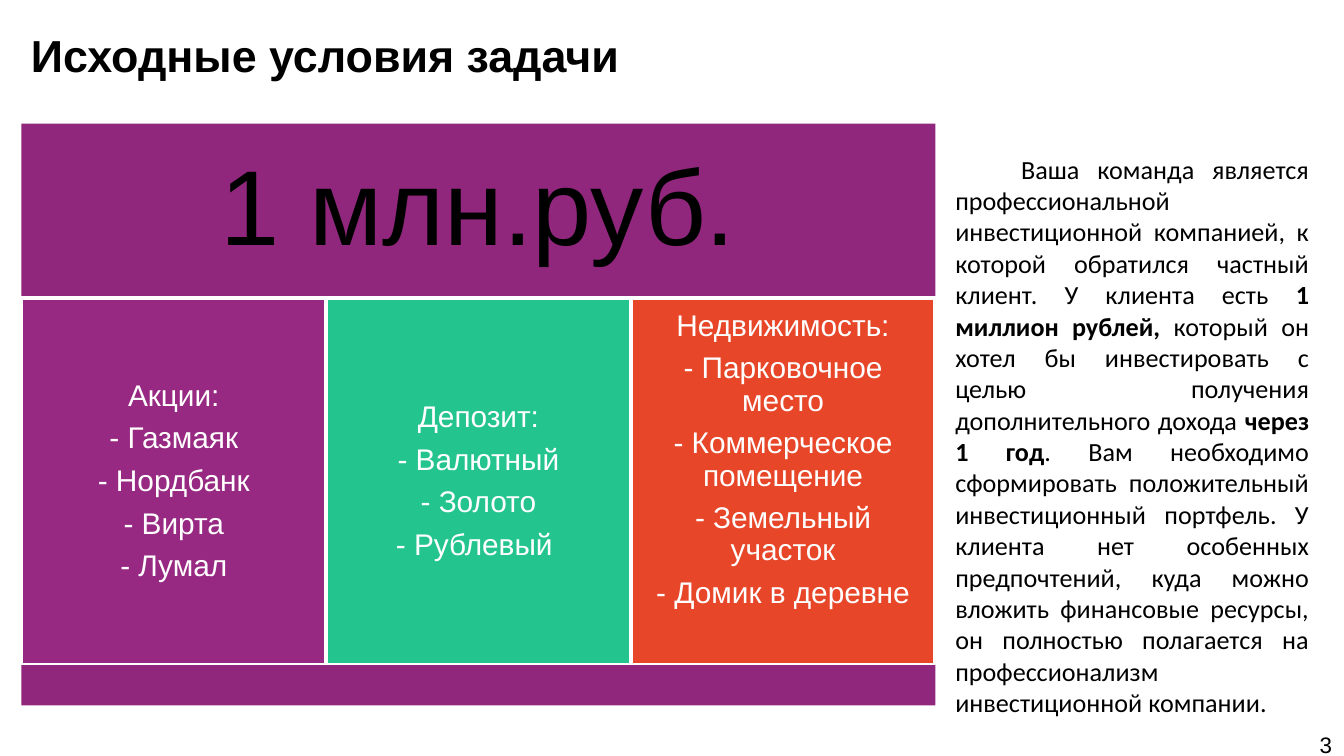
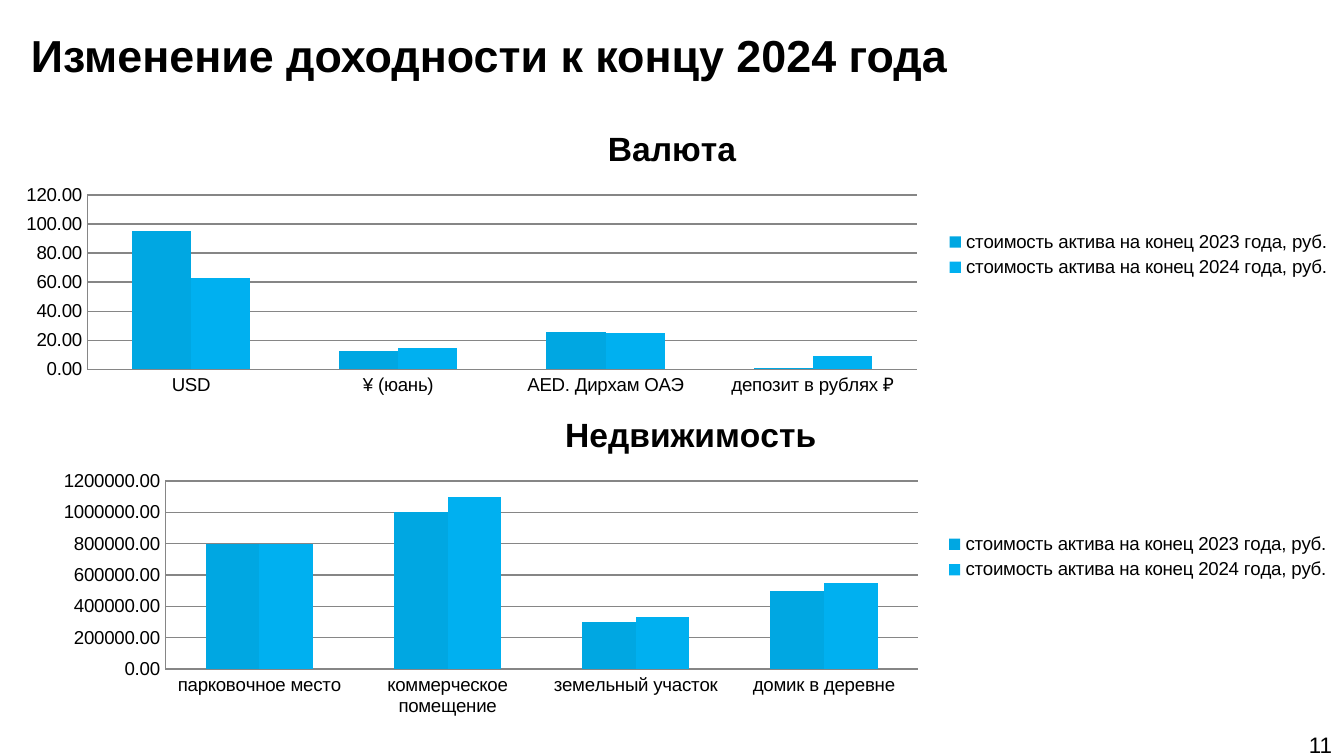
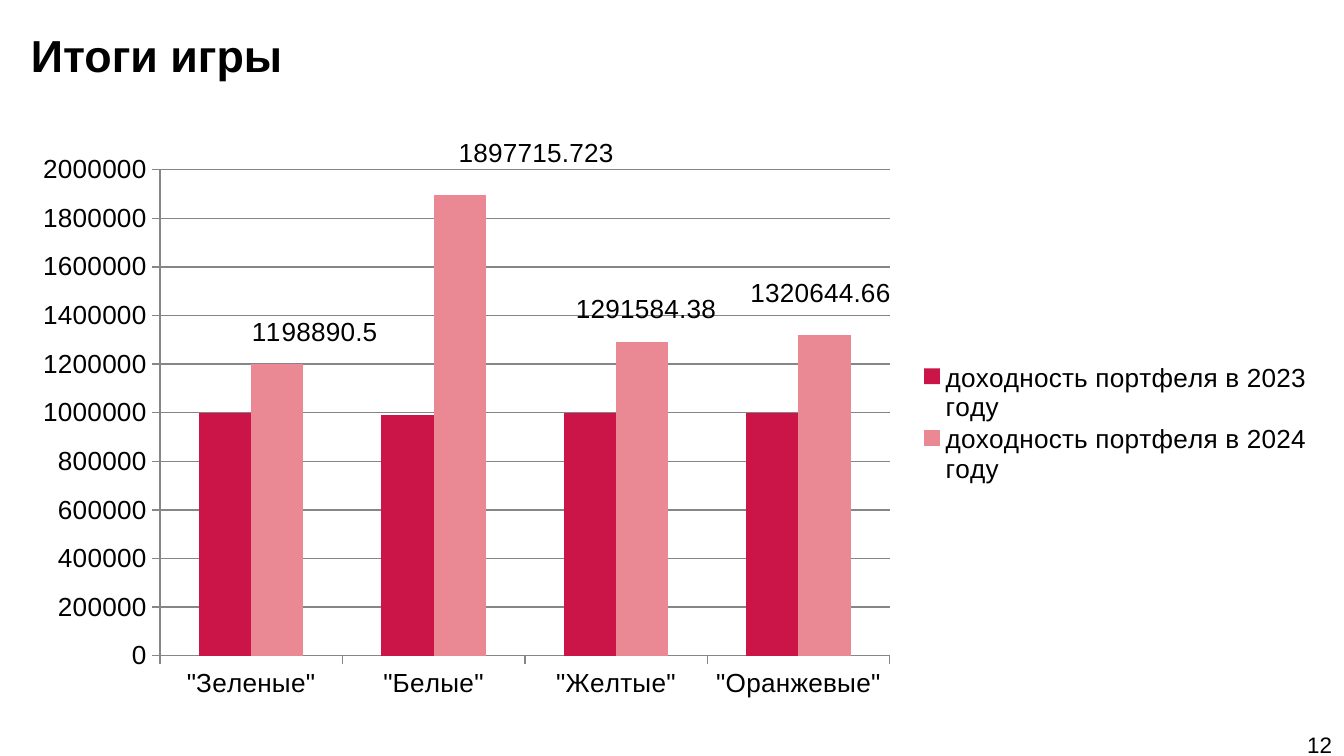
from dataclasses import dataclass

from lxml import etree
from pptx import Presentation
from pptx.chart.data import CategoryChartData
from pptx.dml.color import RGBColor
from pptx.enum.chart import XL_CHART_TYPE, XL_LABEL_POSITION, XL_LEGEND_POSITION, XL_TICK_MARK
from pptx.enum.shapes import MSO_SHAPE
from pptx.enum.text import MSO_ANCHOR, MSO_AUTO_SIZE, PP_ALIGN
from pptx.oxml.ns import qn
from pptx.util import Inches, Pt

COLUMNS = XL_CHART_TYPE.COLUMN_CLUSTERED
OUTSIDE_END = XL_LABEL_POSITION.OUTSIDE_END
LEGEND_RIGHT = XL_LEGEND_POSITION.RIGHT
TICK_NONE, TICK_OUT = XL_TICK_MARK.NONE, XL_TICK_MARK.OUTSIDE
RECTANGLE = MSO_SHAPE.RECTANGLE
MIDDLE = MSO_ANCHOR.MIDDLE
GROW = MSO_AUTO_SIZE.SHAPE_TO_FIT_TEXT
LEFT, CENTER, RIGHT, JUSTIFY = PP_ALIGN.LEFT, PP_ALIGN.CENTER, PP_ALIGN.RIGHT, PP_ALIGN.JUSTIFY


@dataclass(frozen=True)
class Theme:
    """Colours, fonts and type sizes of the deck."""

    black: str = "000000"
    white: str = "FFFFFF"
    band: str = "90277D"
    purple: str = "972983"
    green: str = "24C48F"
    orange: str = "E74629"
    grid: str = "868686"
    blues: tuple = ("00A7E2", "00B0F0")
    reds: tuple = ("CB1549", "EA8894")
    font: str = "Arial"
    body_font: str = "Calibri"
    title: int = 24
    headline: int = 57
    column: int = 16
    body: int = 14
    number: int = 12
    chart_title: int = 18
    chart_small: int = 10
    chart_large: int = 14


THEME = Theme()


def rgb(value):
    """Turn a hex string into a colour."""
    return RGBColor.from_string(value)


def style_font(font, size, color=THEME.black, bold=False, name=THEME.font):
    """Set the look of a font."""
    font.name, font.size, font.bold = name, Pt(size), bold
    font.color.rgb = rgb(color)


def add_span(para, text, size, **look):
    """Add one formatted run."""
    span = para.add_run()
    span.text = text
    style_font(span.font, size, **look)


def place(item, left, top, width, height):
    """Move and size an element, in inches."""
    item.left, item.top = Inches(left), Inches(top)
    item.width, item.height = Inches(width), Inches(height)


def add_page(deck, title, number):
    """Add a page with its title and number."""
    page = deck.slides.add_slide(deck.slide_layouts[5])
    heading = page.shapes.title
    place(heading, 0.13, 0.17, 8.98, 0.47)
    heading.text_frame.vertical_anchor = MIDDLE
    para = heading.text_frame.paragraphs[0]
    para.alignment = LEFT
    add_span(para, title, THEME.title, bold=True)

    box = page.shapes.add_textbox(Inches(9.44), Inches(5.39), Inches(0.57), Inches(0.3))
    box.text_frame.word_wrap = True
    box.text_frame.vertical_anchor = MIDDLE
    para = box.text_frame.paragraphs[0]
    para.alignment = RIGHT
    add_span(para, str(number), THEME.number)
    return page


def add_panel(page, area, fill, outlined=False):
    """Add a filled rectangle."""
    panel = page.shapes.add_shape(RECTANGLE, *map(Inches, area))
    panel.shadow.inherit = False
    panel.fill.solid()
    panel.fill.fore_color.rgb = rgb(fill)
    if outlined:
        panel.line.color.rgb = rgb(THEME.white)
        panel.line.width = Pt(2)
    else:
        panel.line.fill.background()
    panel.text_frame.word_wrap = True
    panel.text_frame.vertical_anchor = MIDDLE
    return panel


def write_lines(panel, lines, size, color, margin, bottom):
    """Write centred lines in a panel."""
    frame = panel.text_frame
    frame.margin_left = frame.margin_right = frame.margin_top = Inches(margin)
    frame.margin_bottom = Inches(bottom)
    for index, line in enumerate(lines):
        para = frame.add_paragraph() if index else frame.paragraphs[0]
        para.alignment = CENTER
        para.line_spacing = 0.9
        para.space_after = Pt(5.6)
        add_span(para, line, size, color=color)


def add_brief(page, area, spans):
    """Add the justified task text from (text, bold) spans."""
    panel = add_panel(page, area, THEME.white)
    panel.text_frame.auto_size = GROW
    para = panel.text_frame.paragraphs[0]
    para.alignment = JUSTIFY
    properties = para._p.get_or_add_pPr()
    properties.set("marL", "0")
    properties.set("indent", str(Inches(0.49)))
    for text, bold in spans:
        add_span(para, text, THEME.body, bold=bold, name=THEME.body_font)


def set_layout(parent, after, values, modes=()):
    """Give a chart part a manual layout, placed after a named child."""
    for old in parent.findall(qn("c:layout")):
        parent.remove(old)
    layout = etree.Element(qn("c:layout"))
    manual = etree.SubElement(layout, qn("c:manualLayout"))
    for tag, value in (*modes, *zip("xywh", values)):
        etree.SubElement(manual, qn(f"c:{tag}")).set("val", str(value))
    if after is None:
        parent.insert(0, layout)
    else:
        parent.find(qn(after)).addnext(layout)


def shares(lengths, frame):
    """Turn inches inside a chart into shares of its width and height."""
    return [length / frame.width if index % 2 == 0 else length / frame.height
            for index, length in enumerate(map(Inches, lengths))]


def style_axis(axis, size, tick):
    """Set text, line and tick marks of an axis."""
    style_font(axis.tick_labels.font, size)
    axis.format.line.color.rgb = rgb(THEME.grid)
    axis.major_tick_mark, axis.minor_tick_mark = tick, TICK_NONE


def add_columns(page, area, categories, series, colors, size, scale, plot_area, legend_area,
                title=None, number_format="General", tick=TICK_NONE):
    """Add a clustered column chart with a legend on the right."""
    data = CategoryChartData(number_format=number_format)
    data.categories = categories
    for name, values in series:
        data.add_series(name, values)
    frame = page.shapes.add_chart(COLUMNS, *map(Inches, area), data)
    chart = frame.chart
    style_font(chart.font, size)
    chart.has_title = title is not None
    if title:
        add_span(chart.chart_title.text_frame.paragraphs[0], title, THEME.chart_title, bold=True)
        chart.chart_title.include_in_layout = False

    style_axis(chart.category_axis, size, tick)
    axis = chart.value_axis
    style_axis(axis, size, tick)
    axis.minimum_scale, axis.maximum_scale, axis.major_unit = 0, *scale
    axis.has_major_gridlines = True
    axis.major_gridlines.format.line.color.rgb = rgb(THEME.grid)
    axis.tick_labels.number_format = number_format
    axis.tick_labels.number_format_is_linked = False

    plot = chart.plots[0]
    plot.gap_width, plot.overlap, plot.vary_by_categories = 150, 0, False
    for column, color in zip(plot.series, colors):
        column.format.fill.solid()
        column.format.fill.fore_color.rgb = rgb(color)

    chart.has_legend = True
    chart.legend.position = LEGEND_RIGHT
    chart.legend.include_in_layout = False
    style_font(chart.legend.font, size)
    edges = (("xMode", "edge"), ("yMode", "edge"))
    inner = (("layoutTarget", "inner"), *edges)
    set_layout(chart.element.xpath("//c:plotArea")[0], None, shares(plot_area, frame), inner)
    set_layout(chart.element.xpath("//c:legend")[0], "c:legendPos",
               shares(legend_area, frame), edges)
    return frame


def label_points(frame, series_index, shifts):
    """Show values above one series, each moved by its own shift."""
    chart = frame.chart
    series = chart.plots[0].series[series_index]
    series.data_labels.show_value = True
    style_font(series.data_labels.font, THEME.chart_large)
    for index, _ in enumerate(shifts):
        label = series.points[index].data_label
        style_font(label.font, THEME.chart_large)
        label.position = OUTSIDE_END
    for element, shift in zip(chart.element.xpath("//c:dLbl"), shifts):
        set_layout(element, "c:idx", shares(shift, frame))
    for leader in chart.element.xpath("//c:showLeaderLines"):
        leader.set("val", "0")


def build_conditions(deck):
    """Build the page with the task conditions."""
    page = add_page(deck, "Исходные условия задачи", 3)
    left, width = 0.16, 6.8
    header = add_panel(page, (left, 0.92, width, 1.3), THEME.band)
    write_lines(header, ["1 млн.руб."], THEME.headline, THEME.black, 0.24, 0.24)
    columns = [
        (THEME.purple, 0.07, ["Акции:", "- Газмаяк", "- Нордбанк", "- Вирта", "- Лумал"]),
        (THEME.green, 0.07, ["Депозит:", "- Валютный", "- Золото", "- Рублевый "]),
        (THEME.orange, 0.39, ["Недвижимость:", "- Парковочное место", "- Коммерческое помещение",
                              "- Земельный участок", "- Домик в деревне"]),
    ]
    step = width / len(columns)
    for index, (fill, bottom, lines) in enumerate(columns):
        column = add_panel(page, (left + index * step, 2.22, step, 2.73), fill, outlined=True)
        write_lines(column, lines, THEME.column, THEME.white, 0.07, bottom)
    add_panel(page, (left, 4.95, width, 0.3), THEME.band)
    add_brief(page, (7.01, 1.07, 2.83, 4.34), [
        ("Ваша команда является профессиональной инвестиционной компанией, к которой обратился "
         "частный клиент. У клиента есть ", False),
        ("1 миллион рублей,", True),
        (" который он хотел бы инвестировать с целью получения дополнительного дохода ", False),
        ("через 1 год", True),
        (". Вам необходимо сформировать положительный инвестиционный портфель. У клиента нет "
         "особенных предпочтений, куда можно вложить финансовые ресурсы, он полностью полагается "
         "на профессионализм инвестиционной компании.", False),
    ])


def build_returns(deck):
    """Build the page with the asset price charts."""
    page = add_page(deck, "Изменение доходности к концу 2024 года", 11)
    names = [f"стоимость актива на конец {year} года, руб." for year in (2023, 2024)]
    look = {"colors": THEME.blues, "size": THEME.chart_small, "number_format": "0.00"}
    add_columns(
        page, (0, 0.8, 10, 2.19),
        ["USD", "¥ (юань)", "AED. Дирхам ОАЭ", "депозит в рублях ₽"],
        zip(names, [(95, 13, 26, 1), (63, 15, 25, 9)]),
        title="Валюта", scale=(120, 20),
        plot_area=(0.65, 0.65, 6.17, 1.3), legend_area=(6.97, 0.89, 3, 0.41), **look)
    add_columns(
        page, (0.28, 2.92, 9.72, 2.46),
        ["парковочное место", "коммерческое помещение", "земельный участок", "домик в деревне"],
        zip(names, [(800000, 1000000, 300000, 500000), (800000, 1100000, 330000, 550000)]),
        title="Недвижимость", scale=(1200000, 200000),
        plot_area=(0.95, 0.66, 5.6, 1.4), legend_area=(6.7, 1.02, 2.97, 0.41), **look)


def build_results(deck):
    """Build the page with the game results."""
    page = add_page(deck, "Итоги игры", 12)
    names = [f"доходность портфеля в {year} году" for year in (2023, 2024)]
    frame = add_columns(
        page, (0.12, 1.03, 9.74, 4.24),
        ['"Зеленые"', '"Белые"', '"Желтые"', '"Оранжевые"'],
        zip(names, [(1000000, 990000, 1000000, 1000000),
                    (1198890.5, 1897715.723, 1291584.38, 1320644.66)]),
        colors=THEME.reds, size=THEME.chart_large, scale=(2000000, 200000), tick=TICK_OUT,
        plot_area=(1.07, 0.23, 5.43, 3.62), legend_area=(6.67, 1.65, 3.02, 0.94))
    label_points(frame, 1, [(0.28, -0.09), (0.57, -0.16), (0.03, -0.09), (-0.03, -0.16)])


def main():
    """Build and save the deck."""
    deck = Presentation()
    deck.slide_width = Inches(10)
    deck.slide_height = deck.slide_width * 9 // 16
    build_conditions(deck)
    build_returns(deck)
    build_results(deck)
    deck.save("out.pptx")


if __name__ == "__main__":
    main()
